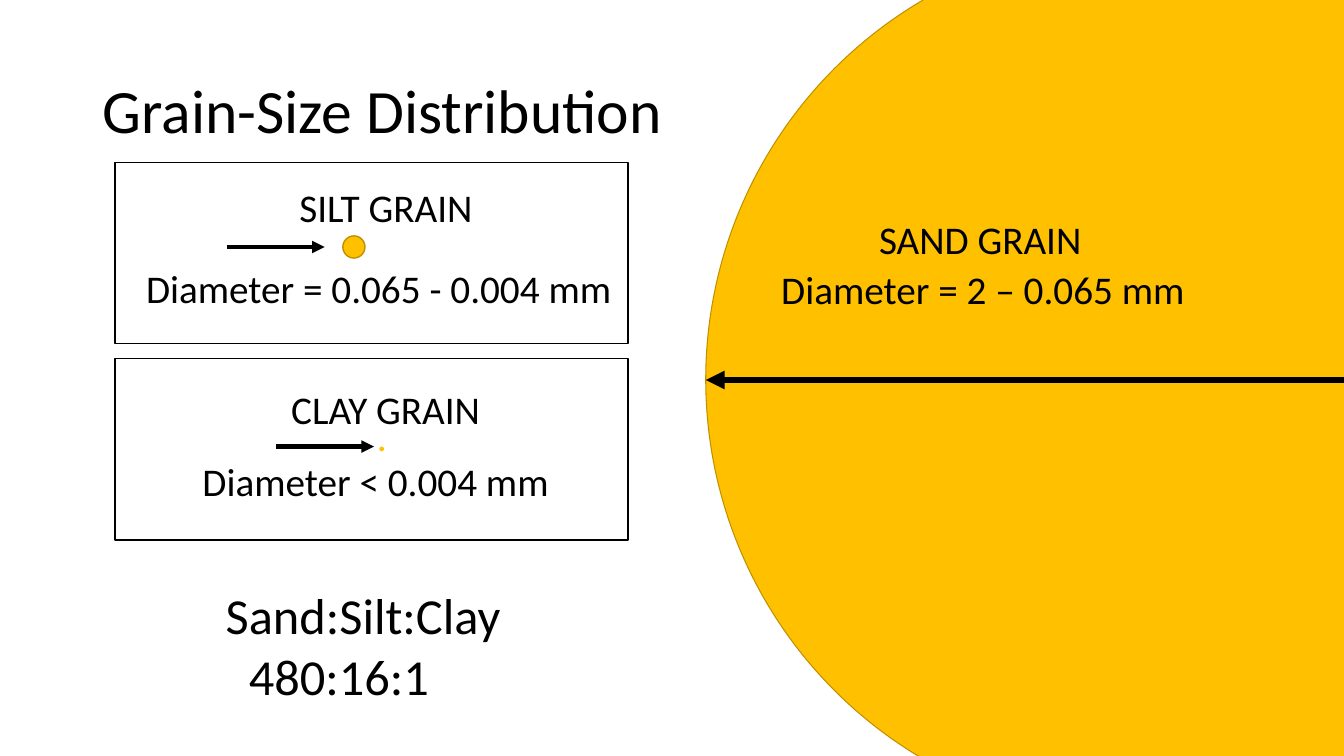
import pptx
import pptx.dml.color
import pptx.enum.shapes
import pptx.enum.text
import pptx.oxml
import pptx.oxml.ns
import pptx.util

PX = 9144  # EMU per px, 100 px to the inch
COLORS = {"ink": "000000", "grain": "FFC000", "rim": "BF9000"}
SHAPES = pptx.enum.shapes.MSO_SHAPE


def color(name):
    return pptx.dml.color.RGBColor.from_string(COLORS[name])


def element(tag, **attributes):
    """Make an empty DrawingML element."""
    node = pptx.oxml.parse_xml(f"<a:{tag} {pptx.oxml.ns.nsdecls('a')}/>")
    for name, value in attributes.items():
        node.set(name, value)
    return node


class Slide:
    """Holds the style and the container that new elements go into."""

    font = "Calibri"
    label_size = 28

    def __init__(self, page):
        self.page = page
        self.shapes = page.shapes

    def start_group(self):
        self.shapes = self.page.shapes.add_group_shape().shapes

    def end_group(self):
        self.shapes = self.page.shapes

    def shape(self, kind, left, top, width, height, fill=None, line="ink", weight=1):
        shape = self.shapes.add_shape(kind, left * PX, top * PX, width * PX, height * PX)
        shape.shadow.inherit = False
        if fill:
            shape.fill.solid()
            shape.fill.fore_color.rgb = color(fill)
        else:
            shape.fill.background()
        shape.line.color.rgb = color(line)
        shape.line.width = pptx.util.Pt(weight)

    def grain(self, left, top, diameter, weight):
        self.shape(SHAPES.OVAL, left, top, diameter, diameter, "grain", "rim", weight)

    def arrow(self, start, end, y, weight, both_ends=False):
        """Draw a level arrow pointing to its end."""
        line = self.shapes.add_connector(
            pptx.enum.shapes.MSO_CONNECTOR.STRAIGHT, start * PX, y * PX, end * PX, y * PX)
        line.line.color.rgb = color("ink")
        line.line.width = pptx.util.Pt(weight)
        outline = line.line._get_or_add_ln()
        for tag in ("headEnd", "tailEnd") if both_ends else ("tailEnd",):
            outline.append(element(tag, type="triangle"))
        line._element.spPr.append(element("effectLst"))

    def text(self, text, left, top, width, height=57, size=label_size, ink="ink",
             wrap=False, middle=False, spacing=None, indents=()):
        """Write one paragraph per line; indents gives each line's left margin."""
        box = self.shapes.add_textbox(left * PX, top * PX, width * PX, height * PX)
        frame = box.text_frame
        frame.word_wrap = wrap
        if middle:
            frame.vertical_anchor = pptx.enum.text.MSO_ANCHOR.MIDDLE
        else:
            frame.auto_size = pptx.enum.text.MSO_AUTO_SIZE.SHAPE_TO_FIT_TEXT
        frame.text = text
        for para in frame.paragraphs:
            if spacing:
                para.line_spacing = spacing
            for span in para.runs:
                span.font.name = self.font
                span.font.size = pptx.util.Pt(size)
                span.font.color.rgb = color(ink)
        for para, indent in zip(frame.paragraphs, indents):
            para._p.get_or_add_pPr().set("marL", str(indent * PX))

    def panel_frame(self, top):
        self.shape(SHAPES.RECTANGLE, 114, top, 509, 180)


def main():
    deck = pptx.Presentation()
    deck.slide_width, deck.slide_height = 1333 * PX, 750 * PX
    slide = Slide(deck.slides.add_slide(deck.slide_layouts[6]))

    slide.grain(700, -60, 873, 0.75)
    slide.arrow(700, 1573, 377, 4.5, both_ends=True)
    slide.text("SAND GRAIN", 862, 209, 223)
    slide.text("Diameter = 2 – 0.065 mm", 765, 258, 425)

    slide.text("Sand:Silt:Clay\n480:16:1", 214, 575, 295, 131, size=36, indents=(0, 23))

    slide.start_group()
    slide.grain(340, 234, 22, 1)
    slide.text("SILT GRAIN", 287, 177, 194)
    slide.text("Diameter = 0.065 - 0.004 mm", 135, 257, 488)
    slide.arrow(225, 322, 245, 3)
    slide.panel_frame(161)

    slide.start_group()
    slide.text(".", 364, 404, 30, ink="grain")
    slide.text("CLAY GRAIN", 279, 377, 210)
    slide.text("Diameter < 0.004 mm", 191, 449, 368)
    slide.arrow(274, 371, 443, 3)
    slide.panel_frame(356)
    slide.end_group()

    slide.text("Grain-Size Distribution", 92, 40, 1150, 145, size=44,
               wrap=True, middle=True, spacing=0.9)
    deck.save("out.pptx")


if __name__ == "__main__":
    main()
